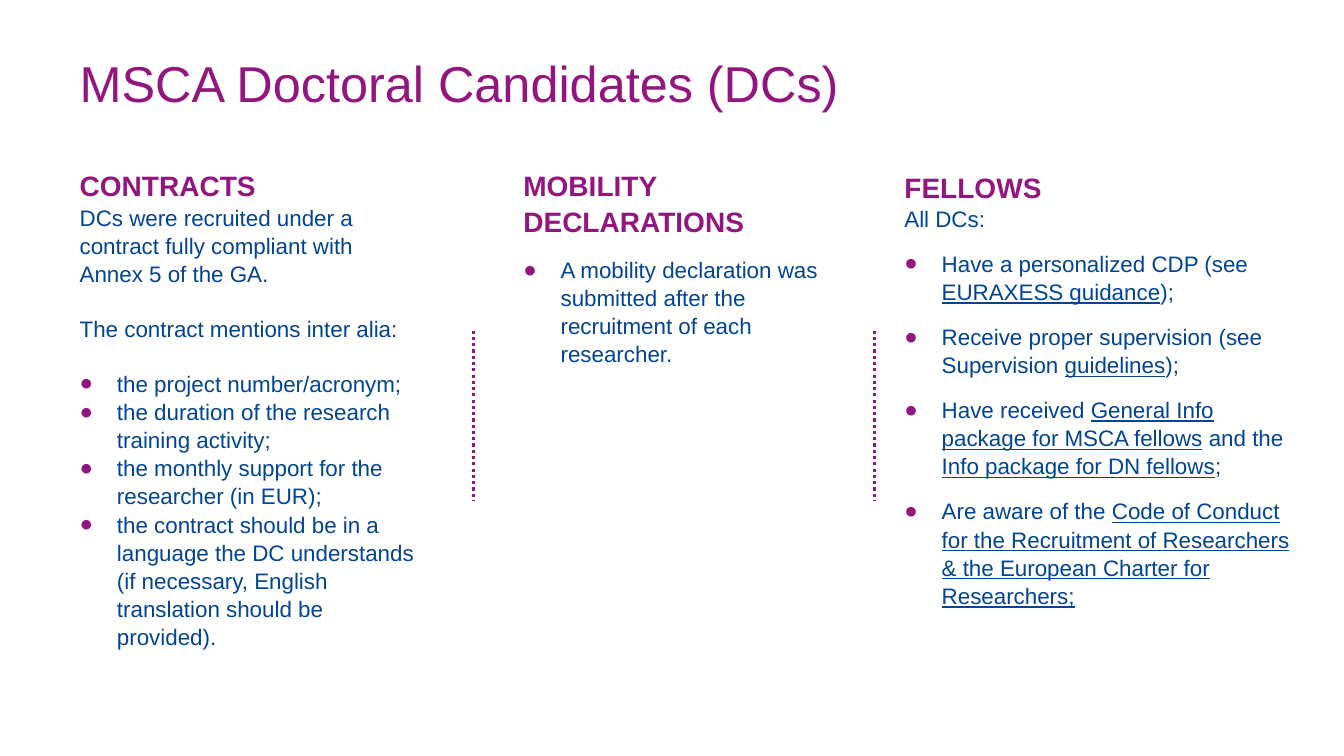
"""Build the slide on contracts, mobility declarations and fellows for doctoral candidates."""
from dataclasses import dataclass

from lxml import etree
from pptx import Presentation
from pptx.dml.color import RGBColor
from pptx.enum.dml import MSO_LINE
from pptx.enum.shapes import MSO_CONNECTOR
from pptx.enum.text import MSO_ANCHOR, MSO_AUTO_SIZE, PP_ALIGN
from pptx.oxml.ns import qn
from pptx.util import Inches, Pt

PURPLE = RGBColor(0x93, 0x16, 0x80)
BLUE = RGBColor(0x00, 0x44, 0x94)
FONT_NAME = "Arial"
COMPARISON_LAYOUT = 4
STRAIGHT = MSO_CONNECTOR.STRAIGHT
DOTTED = MSO_LINE.ROUND_DOT
LEFT = PP_ALIGN.LEFT
TOP, BOTTOM = MSO_ANCHOR.TOP, MSO_ANCHOR.BOTTOM
NO_AUTOFIT = MSO_AUTO_SIZE.NONE
INDENT = Inches(0.37)
BLANK_LINE = 19
DIVIDER_TOP, DIVIDER_BOTTOM = 3.28, 4.97

TITLE_FORMAT = {"name": FONT_NAME, "size": Pt(36), "bold": False}
HEADING_FORMAT = {"name": FONT_NAME, "size": Pt(20), "bold": True}
TEXT_FORMAT = {"name": FONT_NAME, "size": Pt(16), "bold": False}


@dataclass(frozen=True)
class Item:
    """A paragraph whose phrases alternate between plain and underlined."""
    phrases: tuple[str, ...]
    bullet: bool = False
    space_before: float = 0
    heading: bool = False


@dataclass(frozen=True)
class Box:
    """A placeholder's position and its paragraphs."""
    left: float
    top: float
    width: float
    height: float
    items: tuple[Item, ...]


COLUMNS = (
    Box(0.69, 1.61, 3.54, 4.99, (
        Item(("CONTRACTS",), heading=True),
        Item(("DCs were recruited under a contract fully compliant with Annex 5 of the GA.",)),
        Item(("The contract mentions inter alia:",), space_before=BLANK_LINE),
        Item(("the project number/acronym;",), True, BLANK_LINE),
        Item(("the duration of the research training activity;",), True),
        Item(("the monthly support for the researcher (in EUR);",), True),
        Item(("the contract should be in a language the DC understands "
              "(if necessary, English translation should be provided).",), True),
    )),
    Box(5.09, 1.61, 3.54, 3.93, (
        Item(("MOBILITY DECLARATIONS",), heading=True),
        Item(("A mobility declaration was submitted after the recruitment of each researcher.",),
             True, 12),
    )),
    Box(8.87, 1.62, 4.04, 4.63, (
        Item(("FELLOWS",), heading=True),
        Item(("All DCs:",)),
        Item(("Have a personalized CDP (see ", "EURAXESS guidance", ");"), True, 12),
        Item(("Receive proper supervision (see Supervision ", "guidelines", ");"), True, 12),
        Item(("Have received ", "General Info package for MSCA fellows", " and the ",
              "Info package for DN fellows", ";"), True, 12),
        Item(("Are aware of the ", "Code of Conduct for the Recruitment of Researchers "
              "& the European Charter for Researchers;"), True, 12),
    )),
)


def apply_format(target, values: dict) -> None:
    """Set each named attribute on the target."""
    for name, value in values.items():
        setattr(target, name, value)


def place(shape, left: float, top: float, width: float, height: float) -> None:
    """Move and size a shape in inches."""
    apply_format(shape, {"left": Inches(left), "top": Inches(top),
                         "width": Inches(width), "height": Inches(height)})


def set_bullet(paragraph, bullet: bool) -> None:
    """Give a paragraph a purple bullet with a hanging indent, or none."""
    properties = paragraph._p.get_or_add_pPr()
    properties.set("marL", str(INDENT if bullet else 0))
    properties.set("indent", str(-INDENT if bullet else 0))
    if bullet:
        color = etree.SubElement(properties, qn("a:buClr"))
        etree.SubElement(color, qn("a:srgbClr")).set("val", str(PURPLE))
        etree.SubElement(properties, qn("a:buFont")).set("typeface", FONT_NAME)
        etree.SubElement(properties, qn("a:buChar")).set("char", "●")
    else:
        etree.SubElement(properties, qn("a:buNone"))


def add_title(slide, text: str) -> None:
    """Fill the title placeholder."""
    title = slide.shapes.title
    place(title, 0.69, 0.51, 11.5, 0.62)
    title.text = text
    apply_format(title.text_frame, {"vertical_anchor": BOTTOM, "margin_bottom": 0,
                                    "word_wrap": True, "auto_size": NO_AUTOFIT})
    paragraph = title.text_frame.paragraphs[0]
    apply_format(paragraph, {"alignment": LEFT, "line_spacing": 0.9})
    font = paragraph.runs[0].font
    apply_format(font, TITLE_FORMAT)
    font.color.rgb = PURPLE


def fill_column(shape, box: Box) -> None:
    """Place a body placeholder and write its paragraphs."""
    place(shape, box.left, box.top, box.width, box.height)
    frame = shape.text_frame
    apply_format(frame, {"vertical_anchor": TOP, "word_wrap": True, "auto_size": NO_AUTOFIT})
    for number, item in enumerate(box.items):
        paragraph = frame.add_paragraph() if number else frame.paragraphs[0]
        set_bullet(paragraph, item.bullet)
        apply_format(paragraph, {"alignment": LEFT, "line_spacing": 1.05,
                                 "space_before": Pt(item.space_before), "space_after": Pt(0)})
        for position, text in enumerate(item.phrases):
            run = paragraph.add_run()
            run.text = text
            apply_format(run.font, HEADING_FORMAT if item.heading else TEXT_FORMAT)
            run.font.color.rgb = PURPLE if item.heading else BLUE
            if position % 2:
                run.font.underline = True


def add_divider(slide, x: float) -> None:
    """Draw a dotted vertical line between two columns."""
    divider = slide.shapes.add_connector(STRAIGHT, Inches(x), Inches(DIVIDER_TOP),
                                         Inches(x), Inches(DIVIDER_BOTTOM))
    divider.line.color.rgb = PURPLE
    apply_format(divider.line, {"width": Pt(2.25), "dash_style": DOTTED})
    etree.SubElement(divider._element.spPr, qn("a:effectLst"))


def main() -> None:
    """Build and save the presentation."""
    presentation = Presentation()
    apply_format(presentation, {"slide_width": Inches(13.33), "slide_height": Inches(7.5)})
    slide = presentation.slides.add_slide(presentation.slide_layouts[COMPARISON_LAYOUT])
    add_title(slide, "MSCA Doctoral Candidates (DCs)")
    bodies = list(slide.placeholders)[1:]
    for shape, box in zip(bodies, COLUMNS):
        fill_column(shape, box)
    for unused in bodies[len(COLUMNS):]:
        unused._element.getparent().remove(unused._element)
    for x in (4.7, 8.67):
        add_divider(slide, x)
    presentation.save("out.pptx")


if __name__ == "__main__":
    main()
